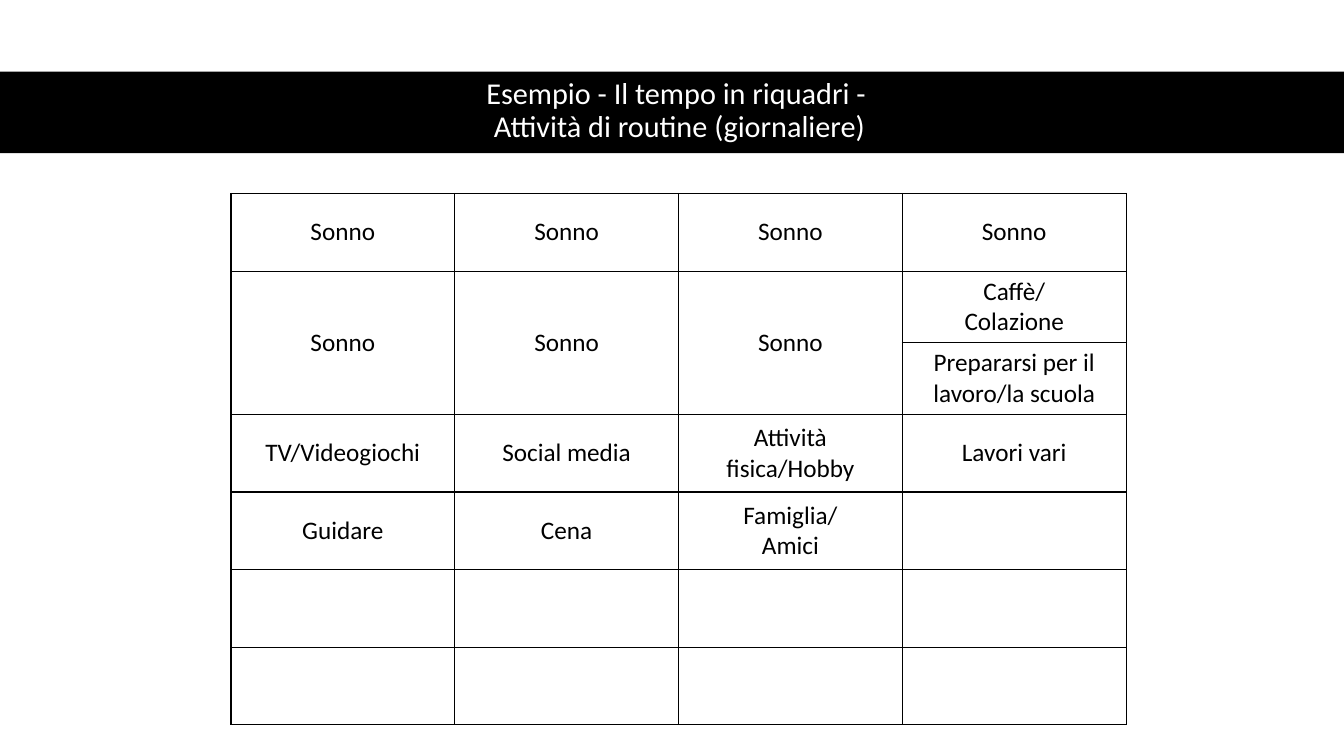
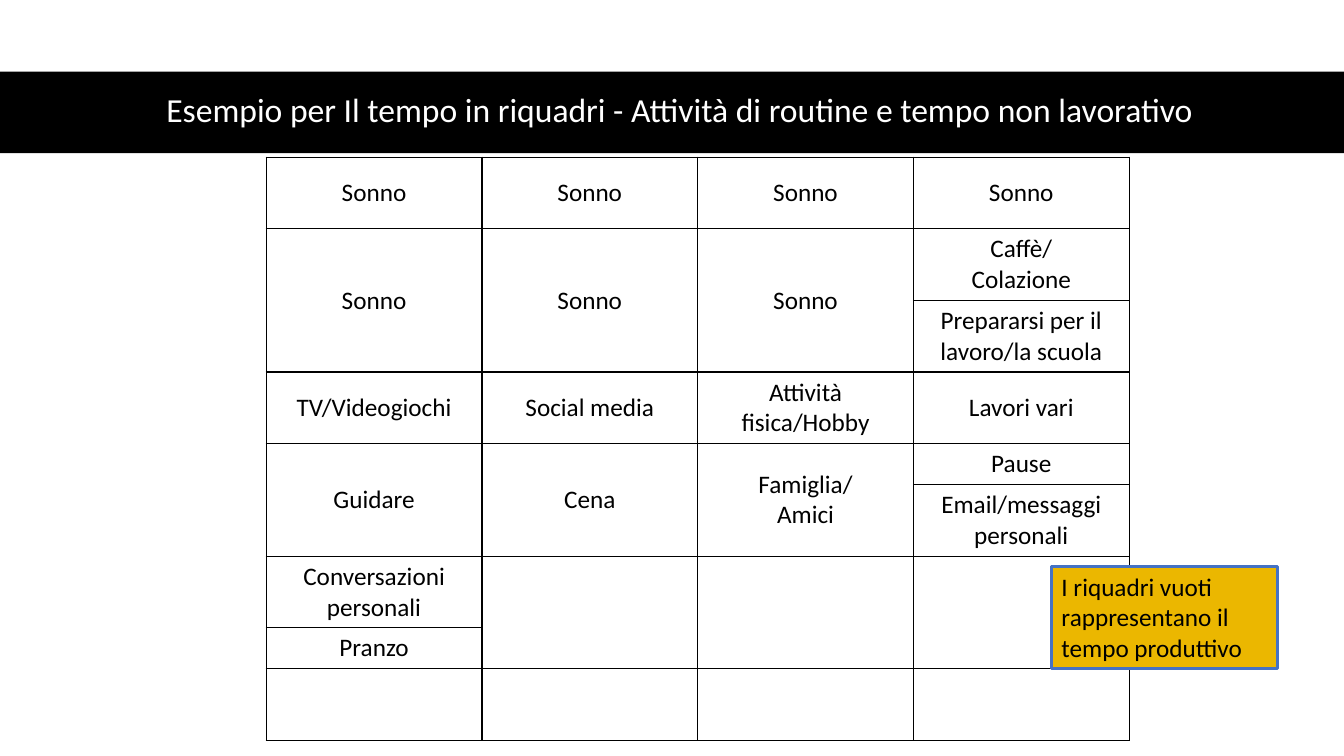
"""Build two slides that show daily routines as tables of time boxes."""
from lxml.etree import SubElement
from pptx import Presentation
from pptx.dml.color import RGBColor
from pptx.enum.shapes import MSO_SHAPE
from pptx.enum.text import MSO_ANCHOR, PP_ALIGN
from pptx.oxml.ns import qn
from pptx.util import Inches, Pt

FONT = "Calibri"
BLACK, WHITE, GOLD, BLUE = "000000", "FFFFFF", "EBB700", "4472C4"
SLIDE_WIDTH, SLIDE_HEIGHT = 13.33, 7.5
BAND_BOX = (0, 0.71, SLIDE_WIDTH, 0.81)
TITLE_BOX = (0.61, 0.7, 12.26, 0.81)
NOTE_BOX = (10.43, 5.62, 2.24, 1.01)
NOTE = "I riquadri vuoti rappresentano il tempo produttivo"
COLUMNS = 4

# None continues the cell above; an empty string is an open time box.
MORNING = [
    ["Sonno"] * COLUMNS,
    ["Sonno", "Sonno", "Sonno", "Caffè/\vColazione"],
    [None, None, None, "Prepararsi per il lavoro/la scuola"],
    ["TV/Videogiochi", "Social media", "Attività fisica/Hobby", "Lavori vari"],
]
EVENING = ["Guidare", "Cena", "Famiglia/\vAmici"]
EMPTY_ROW = [""] * COLUMNS

SLIDES = [
    {
        "title": "Esempio - Il tempo in riquadri - \vAttività di routine (giornaliere)",
        "title_size": 21.6,
        "left": 2.29, "top": 1.92, "column_width": 2.22,
        "heights": [0.77, 0.71, 0.71, 0.77, 0.77, 0.77, 0.77],
        "rows": MORNING + [EVENING + [""], EMPTY_ROW, EMPTY_ROW],
    },
    {
        "title": "Esempio per Il tempo in riquadri - Attività di routine e tempo non lavorativo",
        "title_size": 24,
        "left": 2.64, "top": 1.56, "column_width": 2.14,
        "heights": [0.71, 0.71, 0.71, 0.71, 0.4, 0.71, 0.71, 0.4, 0.71],
        "rows": MORNING + [
            EVENING + ["Pause"],
            [None, None, None, "Email/messaggi personali"],
            ["Conversazioni personali", "", "", ""],
            ["Pranzo", None, None, None],
            EMPTY_ROW,
        ],
        "note": NOTE,
    },
]


def color(value):
    return RGBColor.from_string(value)


def inches(values):
    return [Inches(value) for value in values]


def write(frame, text, size=18, fill=BLACK, align=PP_ALIGN.CENTER, spacing=None):
    frame.text = text
    paragraph = frame.paragraphs[0]
    paragraph.alignment = align
    paragraph.line_spacing = spacing
    for run in paragraph.runs:
        run.font.name = FONT
        run.font.size = Pt(size)
        run.font.bold = False
        run.font.color.rgb = color(fill)


def add_box(slide, box, fill, line=None):
    shape = slide.shapes.add_shape(MSO_SHAPE.RECTANGLE, *inches(box))
    shape.shadow.inherit = False
    shape.fill.solid()
    shape.fill.fore_color.rgb = color(fill)
    if line:
        shape.line.color.rgb = color(line)
        shape.line.width = Pt(2.25)
    else:
        shape.line.fill.background()
    return shape


def add_title(slide, text, size):
    title = slide.shapes.title
    title.left, title.top, title.width, title.height = inches(TITLE_BOX)
    title.text_frame.vertical_anchor = MSO_ANCHOR.MIDDLE
    title.text_frame.word_wrap = True
    write(title.text_frame, text, size=size, fill=WHITE, spacing=0.9)
    band = add_box(slide, BAND_BOX, BLACK)
    title.element.addprevious(band.element)


def add_borders(cell):
    properties = cell._tc.get_or_add_tcPr()
    for side in ("lnL", "lnR", "lnT", "lnB"):
        border = SubElement(properties, qn(f"a:{side}"), w=str(Pt(1)))
        fill = SubElement(border, qn("a:solidFill"))
        SubElement(fill, qn("a:srgbClr"), val=BLACK)


def add_time_table(slide, rows, left, top, column_width, heights):
    box = inches((left, top, column_width * COLUMNS, sum(heights)))
    table = slide.shapes.add_table(len(rows), COLUMNS, *box).table
    table.first_row = table.horz_banding = False
    for column in table.columns:
        column.width = Inches(column_width)
    for row, height in zip(table.rows, heights):
        row.height = Inches(height)
    for row_index, row in enumerate(rows):
        for column_index, text in enumerate(row):
            cell = table.cell(row_index, column_index)
            add_borders(cell)
            cell.fill.background()
            cell.vertical_anchor = MSO_ANCHOR.MIDDLE
            if text is None:
                table.cell(row_index - 1, column_index).merge(cell)
            else:
                write(cell.text_frame, text)


def add_note(slide, text):
    frame = add_box(slide, NOTE_BOX, GOLD, line=BLUE).text_frame
    frame.word_wrap = True
    frame.vertical_anchor = MSO_ANCHOR.TOP
    write(frame, text, align=PP_ALIGN.LEFT)


def main():
    presentation = Presentation()
    presentation.slide_width = Inches(SLIDE_WIDTH)
    presentation.slide_height = Inches(SLIDE_HEIGHT)
    for content in SLIDES:
        slide = presentation.slides.add_slide(presentation.slide_layouts[5])
        add_title(slide, content["title"], content["title_size"])
        add_time_table(slide, content["rows"], content["left"], content["top"],
                       content["column_width"], content["heights"])
        if "note" in content:
            add_note(slide, content["note"])
    presentation.save("out.pptx")


if __name__ == "__main__":
    main()
